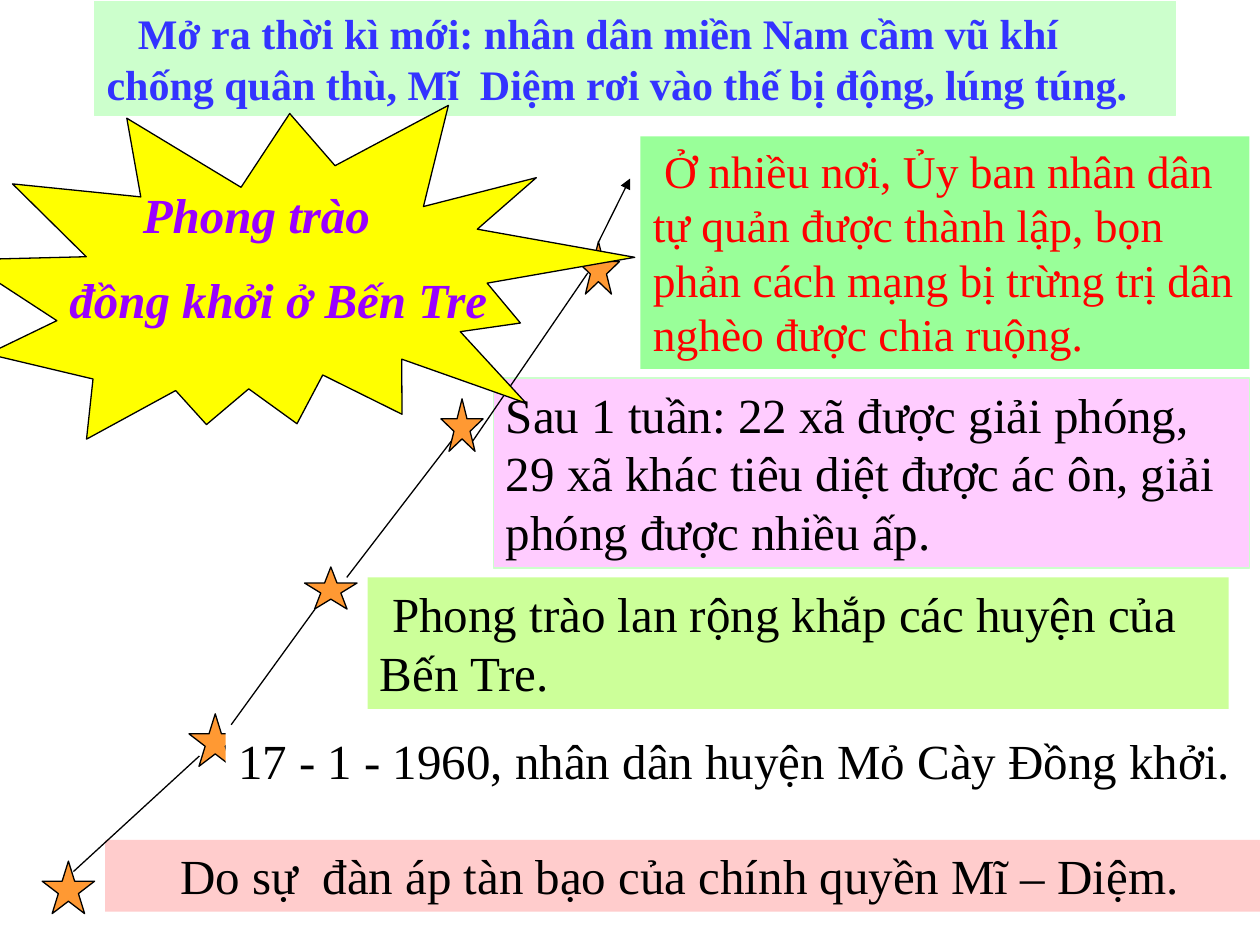
from dataclasses import dataclass

from pptx import Presentation
from pptx.dml.color import RGBColor
from pptx.enum.shapes import MSO_CONNECTOR, MSO_SHAPE
from pptx.enum.text import MSO_ANCHOR, MSO_AUTO_SIZE, PP_ALIGN
from pptx.oxml.ns import qn
from pptx.util import Cm, Pt
from lxml import etree

STAR = MSO_SHAPE.STAR_5_POINT
RECTANGLE = MSO_SHAPE.RECTANGLE
BURST = MSO_SHAPE.EXPLOSION2
STRAIGHT = MSO_CONNECTOR.STRAIGHT
TOP = MSO_ANCHOR.TOP
LEFT = PP_ALIGN.LEFT
GROW = MSO_AUTO_SIZE.SHAPE_TO_FIT_TEXT


@dataclass(frozen=True)
class Theme:
    font: str = "Times New Roman"
    body: float = 28
    compact: float = 26
    heading: float = 24
    paragraph_gap: float = 15
    outline: float = 0.75
    black: str = "000000"
    white: str = "FFFFFF"
    red: str = "FF0000"
    blue: str = "3333FF"
    violet: str = "9900FF"
    orange: str = "FF9933"
    yellow: str = "FFFF00"
    rose: str = "FFCCCC"
    lime: str = "CCFF99"
    pink: str = "FFCCFF"
    green: str = "99FF99"
    mint: str = "CCFFCC"


class SlideBuilder:
    def __init__(self, slide, theme):
        self.slide = slide
        self.theme = theme

    def shape(self, kind, place, fill, line=None, rotation=0):
        shape = self.slide.shapes.add_shape(kind, *map(Cm, place))
        shape.shadow.inherit = False
        shape.rotation = rotation
        shape.fill.solid()
        shape.fill.fore_color.rgb = RGBColor.from_string(fill)
        if line:
            shape.line.color.rgb = RGBColor.from_string(line)
            shape.line.width = Pt(self.theme.outline)
        else:
            shape.line.fill.background()
        return shape

    def set_text(self, box, lines, size, color, bold=False, italic=False):
        """Fill a box with (text, first-line indent) pairs."""
        frame = box.text_frame
        frame.text = "\n".join(text for text, _ in lines)
        frame.word_wrap = True
        frame.auto_size = GROW
        frame.vertical_anchor = TOP
        for number, (para, (_, indent)) in enumerate(zip(frame.paragraphs, lines)):
            para.alignment = LEFT
            para._p.get_or_add_pPr().set("indent", str(Cm(indent)))
            if number:
                para.space_before = Pt(self.theme.paragraph_gap)
            for span in para.runs:
                span.font.name = self.theme.font
                span.font.size = Pt(size)
                span.font.bold = bold
                span.font.italic = italic
                span.font.color.rgb = RGBColor.from_string(color)

    def panel(self, place, fill, text, indent=0, size=None, color=None, line=None, bold=False):
        box = self.shape(RECTANGLE, place, fill, line)
        self.set_text(box, [(text, indent)], size or self.theme.body,
                      color or self.theme.black, bold)

    def caption(self, place, lines, color):
        box = self.slide.shapes.add_textbox(*map(Cm, place))
        self.set_text(box, lines, self.theme.body, color, bold=True, italic=True)

    def connector(self, ends, arrow=False):
        line = self.slide.shapes.add_connector(STRAIGHT, *map(Cm, ends))
        line.line.color.rgb = RGBColor.from_string(self.theme.black)
        line.line.width = Pt(self.theme.outline)
        properties = line._element.spPr
        if arrow:
            etree.SubElement(properties.get_or_add_ln(), qn("a:tailEnd"), type="triangle")
        etree.SubElement(properties, qn("a:effectLst"))


def main():
    theme = Theme()
    deck = Presentation()
    deck.slide_width, deck.slide_height = Cm(25.4), Cm(19.05)
    page = SlideBuilder(deck.slides.add_slide(deck.slide_layouts[6]), theme)

    # Timeline steps from the bottom up: star, link to the next step, panel
    steps = [
        ((0.85, 17.36, 1.06, 1.06), (1.48, 17.57, 4.02, 15.24),
         dict(place=(2.12, 16.93, 23.28, 1.45), fill=theme.rose, indent=1.27,
              text="Do sự  đàn áp tàn bạo của chính quyền Mĩ – Diệm.")),
        ((3.81, 14.39, 1.06, 1.06), (4.66, 14.61, 6.35, 12.28),
         dict(place=(4.55, 14.61, 20.85, 1.45), fill=theme.white,
              text="17 - 1 - 1960, nhân dân huyện Mỏ Cày Đồng khởi.")),
        ((6.14, 11.43, 1.06, 0.85), (6.99, 11.64, 9.1, 8.89),
         dict(place=(7.41, 11.64, 17.36, 2.65), fill=theme.lime, indent=0.25,
              text="Phong trào lan rộng khắp các huyện của Bến Tre.")),
        ((8.89, 8.04, 0.85, 1.06), (9.53, 8.89, 11.85, 5.5),
         dict(place=(9.95, 7.62, 15.24, 3.83), fill=theme.pink, line=theme.mint,
              text="Sau 1 tuần: 22 xã được giải phóng, 29 xã khác tiêu diệt "
                   "được ác ôn, giải phóng được nhiều ấp.")),
        ((11.64, 4.87, 0.85, 1.06), (12.07, 4.87, 12.7, 3.6),
         dict(place=(12.91, 2.75, 12.28, 4.69), fill=theme.green, indent=0.23,
              size=theme.compact, color=theme.red,
              text="Ở nhiều nơi, Ủy ban nhân dân tự quản được thành lập, bọn "
                   "phản cách mạng bị trừng trị dân nghèo được chia ruộng.")),
    ]
    for number, (star, link, panel) in enumerate(steps, start=1):
        page.shape(STAR, star, theme.orange, theme.black)
        page.panel(**panel)
        page.connector(link, arrow=number == len(steps))

    # Outcome at the top
    page.panel((1.9, 0.03, 21.8, 2.3), theme.mint,
               "Mở ra thời kì mới: nhân dân miền Nam cầm vũ khí chống quân thù, "
               "Mĩ  Diệm rơi vào thế bị động, lúng túng.",
               indent=0.63, size=theme.heading, color=theme.blue, line=theme.mint, bold=True)

    # Burst with the name of the movement
    page.shape(BURST, (-0.7, 1.67, 13.34, 7.83), theme.yellow, theme.black, rotation=9.4)
    page.caption((-1.07, 3.6, 11.69, 3.26),
                 [("Phong trào", 3.7), ("đồng khởi ở Bến Tre", 2.22)], theme.violet)

    deck.save("out.pptx")


if __name__ == "__main__":
    main()
